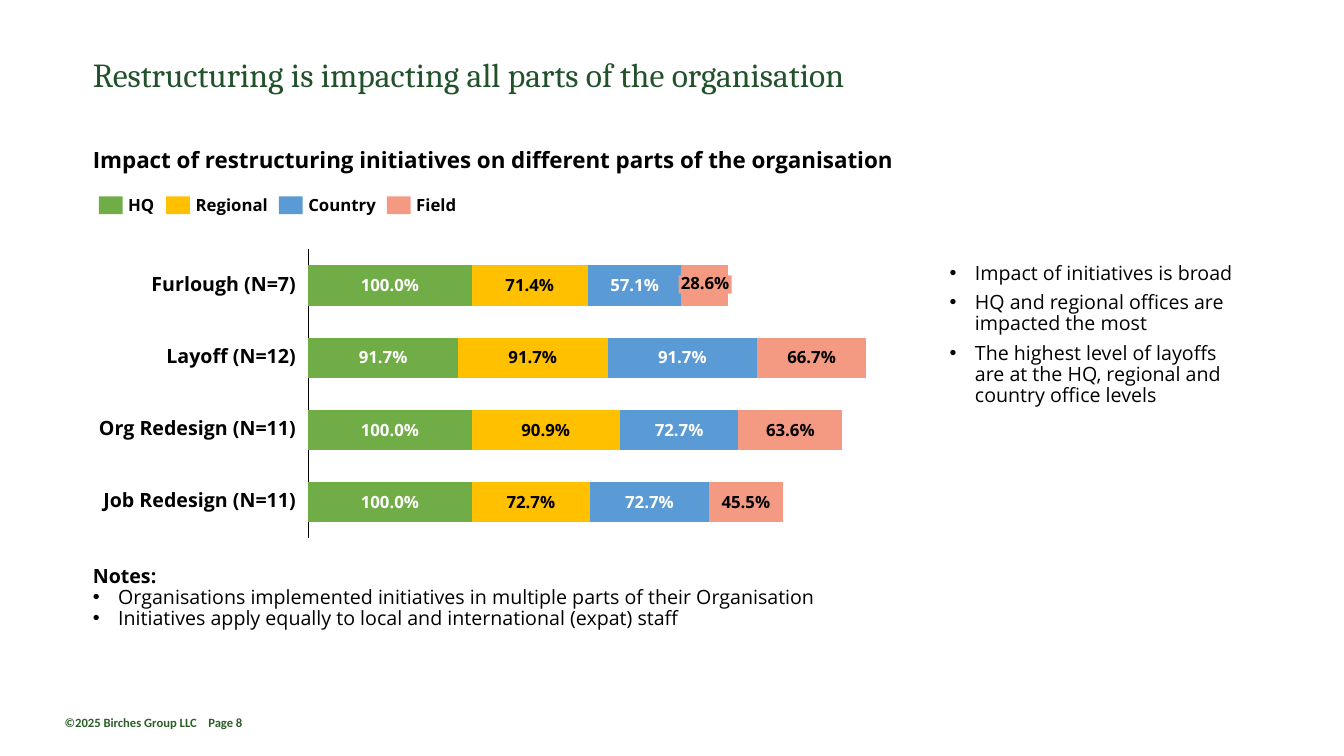
from lxml.etree import SubElement
from pptx import Presentation
from pptx.chart.data import CategoryChartData
from pptx.dml.color import RGBColor
from pptx.enum.chart import XL_CHART_TYPE, XL_TICK_LABEL_POSITION, XL_TICK_MARK
from pptx.enum.shapes import MSO_SHAPE
from pptx.enum.text import MSO_ANCHOR, PP_ALIGN
from pptx.oxml import parse_xml
from pptx.oxml.ns import nsdecls, qn
from pptx.util import Cm, Pt

BLACK = RGBColor(0x00, 0x00, 0x00)
WHITE = RGBColor(0xFF, 0xFF, 0xFF)
PINE = RGBColor(0x22, 0x52, 0x2C)
MOSS = RGBColor(0x2C, 0x5E, 0x28)
GREEN = RGBColor(0x70, 0xAD, 0x47)
GOLD = RGBColor(0xFF, 0xC0, 0x00)
BLUE = RGBColor(0x5B, 0x9B, 0xD5)
CORAL = RGBColor(0xF4, 0x9A, 0x82)

deck = Presentation()
deck.slide_width, deck.slide_height = Cm(33.87), Cm(19.05)
slide = deck.slides.add_slide(deck.slide_layouts[6])


def add_text(box, lines, size, font="Open Sans", color=BLACK, bold=False,
             align=PP_ALIGN.LEFT, anchor=MSO_ANCHOR.MIDDLE, after=0, bullets=()):
    """Fill a shape with lines; those whose index is in bullets get a bullet and no bold."""
    frame = box.text_frame
    frame.word_wrap = True
    frame.vertical_anchor = anchor
    frame.margin_left = frame.margin_right = 0
    frame.margin_top = frame.margin_bottom = 0
    frame.text = "\n".join(lines)
    for i, para in enumerate(frame.paragraphs):
        if i in bullets:
            props = para._p.get_or_add_pPr()
            props.set("marL", str(Cm(0.64)))
            props.set("indent", str(-Cm(0.64)))
            SubElement(props, qn("a:buFont")).set("typeface", "Arial")
            SubElement(props, qn("a:buChar")).set("char", "•")
        para.alignment = align
        para.line_spacing = 0.9
        para.space_after = Pt(after)
        for run in para.runs:
            run.font.name = font
            run.font.size = Pt(size)
            run.font.bold = bold and i not in bullets
            run.font.color.rgb = color


def add_block(left, top, width, height, fill):
    block = slide.shapes.add_shape(
        MSO_SHAPE.RECTANGLE, Cm(left), Cm(top), Cm(width), Cm(height))
    block.shadow.inherit = False
    block.fill.solid()
    block.fill.fore_color.rgb = fill
    block.line.fill.background()
    return block


# Headings and footer
foot = slide.shapes.add_textbox(Cm(1.63), Cm(17.91), Cm(7.2), Cm(0.64))
add_text(foot, ["©2025 Birches Group LLC\u00a0\u00a0\u00a0 Page 8"], 9, "Calibri", MOSS, True)
title = slide.shapes.add_textbox(Cm(2.34), Cm(1.07), Cm(28.7), Cm(1.7))
add_text(title, ["Restructuring is impacting all parts of the organisation"],
         24, "Cambria", PINE)
head = slide.shapes.add_textbox(Cm(2.34), Cm(3.76), Cm(29.2), Cm(0.53))
add_text(head, ["Impact of restructuring initiatives on different parts of the organisation"],
         16, bold=True, anchor=MSO_ANCHOR.TOP)

# Stacked bars: name, fill, label colour, legend left, values
groups = [
    ("HQ", GREEN, WHITE, 2.49, (100, 91.7, 100, 100)),
    ("Regional", GOLD, BLACK, 4.19, (71.4, 91.7, 90.9, 72.7)),
    ("Country", BLUE, WHITE, 7.03, (57.1, 91.7, 72.7, 72.7)),
    ("Field", CORAL, BLACK, 9.75, (28.6, 66.7, 63.6, 45.5)),
]
rows = ["Furlough (N=7)", "Layoff (N=12)", "Org Redesign (N=11)", "Job Redesign (N=11)"]
data = CategoryChartData(number_format="0.0")
data.categories = rows
for name, fill, ink, left, values in groups:
    data.add_series(name, values)
chart = slide.shapes.add_chart(
    XL_CHART_TYPE.BAR_STACKED, Cm(7.54), Cm(5.54), Cm(14.53), Cm(8.76), data).chart
chart.has_title = False
chart.has_legend = False
chart.font.name = "Calibri"
chart.font.size = Pt(10)
chart.font.color.rgb = BLACK

axis = chart.category_axis
axis.reverse_order = True
axis.tick_label_position = XL_TICK_LABEL_POSITION.NONE
axis.major_tick_mark = XL_TICK_MARK.NONE
axis.format.line.color.rgb = BLACK
axis.format.line.width = Pt(0.75)
scale = chart.value_axis
scale.minimum_scale, scale.maximum_scale = 0, 342
scale.has_major_gridlines = False
scale.visible = False

plot = chart.plots[0]
plot.gap_width, plot.overlap = 80, 100
plot.vary_by_categories = False
for series, (name, fill, ink, left, values) in zip(plot.series, groups):
    series.format.fill.solid()
    series.format.fill.fore_color.rgb = fill
    tags = series.data_labels
    tags.show_value = True
    tags.number_format = '0.0"%"'
    tags.number_format_is_linked = False
    tags.font.name = "Open Sans"
    tags.font.size = Pt(12)
    tags.font.bold = True
    tags.font.color.rgb = ink

# The narrow Furlough bar of the last series has its own label block
tags._element.insert(0, parse_xml(
    f'<c:dLbl {nsdecls("c")}><c:idx val="0"/><c:delete val="1"/></c:dLbl>'))

area = chart._chartSpace.chart.plotArea
for old in area.findall(qn("c:layout")):
    area.remove(old)
area.insert(0, parse_xml(
    f'<c:layout {nsdecls("c")}><c:manualLayout><c:layoutTarget val="inner"/>'
    '<c:xMode val="edge"/><c:yMode val="edge"/><c:x val="0.016"/><c:y val="0.085"/>'
    '<c:w val="0.968"/><c:h val="0.831"/></c:manualLayout></c:layout>'))

for i, row in enumerate(rows):
    label = slide.shapes.add_textbox(Cm(2.2), Cm(6.91 + 1.82 * i), Cm(5.26), Cm(0.53))
    add_text(label, [row], 14, bold=True, align=PP_ALIGN.RIGHT)

small = add_block(17.1, 6.94, 1.34, 0.46, CORAL)
add_text(small, ["28.6%"], 12, bold=True, align=PP_ALIGN.CENTER)

# Legend
for name, fill, ink, left, values in groups:
    add_block(left, 4.95, 0.6, 0.45, fill)
    key = slide.shapes.add_textbox(Cm(left + 0.74), Cm(4.96), Cm(2.1), Cm(0.45))
    add_text(key, [name], 12, bold=True)

# Findings and notes
side = slide.shapes.add_textbox(Cm(23.93), Cm(6.63), Cm(7.55), Cm(3.4))
add_text(side, [
    "Impact of initiatives is broad",
    "HQ and regional offices are impacted the most",
    "The highest level of layoffs are at the HQ, regional and country office levels",
], 14, anchor=MSO_ANCHOR.TOP, after=6, bullets=(0, 1, 2))
notes = slide.shapes.add_textbox(Cm(2.34), Cm(14.27), Cm(19.86), Cm(1.6))
add_text(notes, [
    "Notes:",
    "Organisations implemented initiatives in multiple parts of their Organisation",
    "Initiatives apply equally to local and international (expat) staff",
], 14, bold=True, anchor=MSO_ANCHOR.TOP, bullets=(1, 2))

deck.save("out.pptx")
